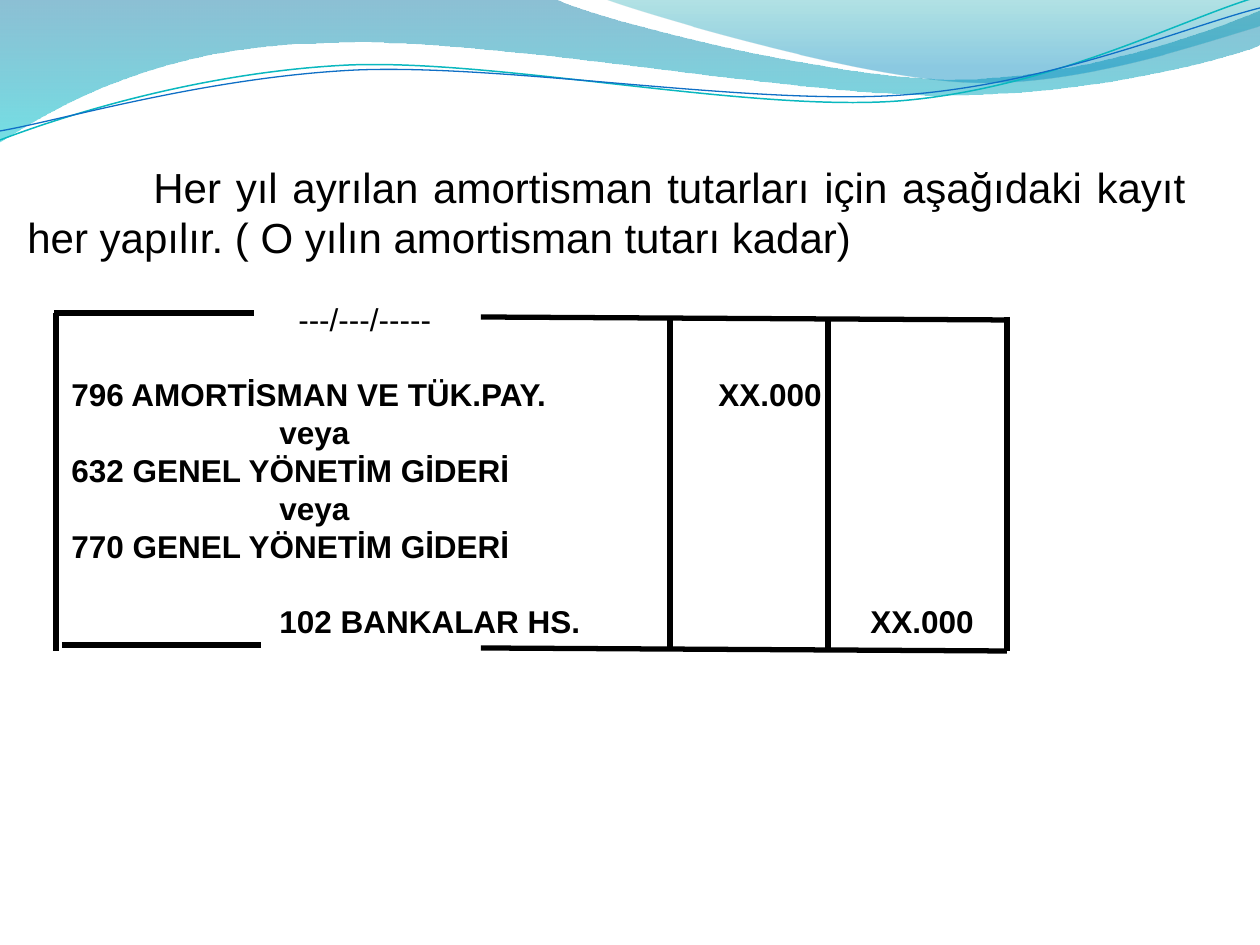
from pptx import Presentation
from pptx.dml.color import RGBColor
from pptx.enum.shapes import MSO_CONNECTOR
from pptx.enum.text import PP_ALIGN
from pptx.oxml.ns import qn
from pptx.util import Emu, Pt
from lxml import etree

LINE = MSO_CONNECTOR.STRAIGHT
JUST = PP_ALIGN.JUSTIFY
PITCH = 21.6

# Outlines in px: a start point, then lines (x, y) or cubic curves (6 numbers)
BANDS = [
    ([(0, 0), (555, -1), (600, 21, 837, 79, 955, 79),
      (1075, 79, 1207, 33, 1260, 11), (1261, 45),
      (1239, 55, 1096, 96, 940, 95), (784, 95, 481, 35, 324, 43),
      (163, 45, 58, 105, -1, 142)],
     [(0, "0074A1", 45), (1, "00C6CF", 55)]),
    ([(604, -1), (643, 14, 859, 78, 969, 82),
      (1079, 87, 1211, 40, 1260, 26), (1260, 0)],
     [(0, "00A1A9", 30), (0.8, "008BBF", 45)]),
]
WAVES = [
    ([(0, 140), (60, 117, 199, 72, 349, 65), (498, 59, 747, 112, 898, 101),
      (1050, 89, 1182, 19, 1257, -3)], "0AB8BF", 0.85),
    ([(0, 131), (59, 121, 207, 77, 357, 70), (508, 64, 752, 106, 903, 95),
      (1053, 84, 1188, 26, 1260, 8)], "0F6FC6", 0.75),
]
INTRO = ("Her yıl ayrılan amortisman tutarları için aşağıdaki kayıt "
         "her yapılır. ( O yılın amortisman tutarı kadar)")
# Text, tab stops in px, bold, free lines above
ROWS = [
    ("\t---/---/-----", [271], False, 1),
    ("\t796 AMORTİSMAN VE TÜK.PAY.\tXX.000", [44, 691], True, 1),
    ("\tveya", [252], True, 0),
    ("\t632 GENEL YÖNETİM GİDERİ", [44], True, 0),
    ("\tveya", [252], True, 0),
    ("\t770 GENEL YÖNETİM GİDERİ", [44], True, 0),
    ("\t102 BANKALAR HS.\tXX.000", [252, 843], True, 1),
]
RULES = [
    (54, 313, 254, 313, 3), (481, 317, 1007, 320, 3),
    (670, 318, 670, 651, 3.5), (828, 320, 828, 649, 3.5),
    (1007, 317, 1007, 651, 3.5), (56, 313, 56, 651, 3.5),
    (62, 645, 261, 645, 3), (481, 648, 1007, 651, 3),
]


def px(n):
    return Emu(round(n * 914400 / 126))


def rgb(code):
    return RGBColor.from_string(code)


def add_free(slide, path, close):
    """Join the segment ends by lines, then bend the curved ones."""
    ends = [(px(seg[-2]), px(seg[-1])) for seg in path]
    pen = slide.shapes.build_freeform(*ends[0], scale=1.0)
    pen.add_line_segments(ends[1:], close=close)
    shape = pen.convert_to_shape()
    shape.shadow.inherit = False
    left, top = shape.left, shape.top
    lines = list(shape.element.iter(qn("a:lnTo")))
    for line, seg in zip(lines, path[1:]):
        if len(seg) == 6:
            line.tag = qn("a:cubicBezTo")
            for i in (0, 2):
                pt = etree.Element(qn("a:pt"), x=str(px(seg[i]) - left),
                                   y=str(px(seg[i + 1]) - top))
                line.insert(i // 2, pt)
    return shape


def add_band(slide, path, stops):
    shape = add_free(slide, path, True)
    shape.line.fill.background()
    fill = shape.fill
    fill.gradient()
    fill.gradient_angle = 270
    nodes = shape.element.spPr.find(qn("a:gradFill")).iter(qn("a:gs"))
    for stop, node, (pos, code, alpha) in zip(fill.gradient_stops,
                                              nodes, stops):
        stop.position = pos
        stop.color.rgb = rgb(code)
        etree.SubElement(node[0], qn("a:alpha"), val=str(alpha * 1000))


def add_wave(slide, path, code, width):
    shape = add_free(slide, path, False)
    shape.fill.background()
    shape.line.color.rgb = rgb(code)
    shape.line.width = Pt(width)


def add_rule(slide, x1, y1, x2, y2, width):
    rule = slide.shapes.add_connector(LINE, px(x1), px(y1), px(x2), px(y2))
    rule.line.color.rgb = rgb("000000")
    rule.line.width = Pt(width)
    etree.SubElement(rule.element.spPr, qn("a:effectLst"))


def set_para(para, text, tabs, size, bold, pitch, above):
    form = {"alignment": JUST, "line_spacing": Pt(pitch),
            "space_before": Pt(above), "space_after": Pt(0)}
    for key, val in form.items():
        setattr(para, key, val)
    stops = etree.SubElement(para._p.get_or_add_pPr(), qn("a:tabLst"))
    for tab in tabs:
        etree.SubElement(stops, qn("a:tab"), pos=str(px(tab)), algn="l")
    run = para.add_run()
    run.text = text
    for key, val in {"name": "Arial", "size": Pt(size), "bold": bold}.items():
        setattr(run.font, key, val)
    run.font.color.rgb = rgb("000000")


def add_entry(slide):
    """Place the opening sentence and the journal rows in one text box."""
    box = slide.shapes.add_textbox(px(15), px(155), px(1183), px(866))
    frame = box.text_frame
    frame.word_wrap = True
    set_para(frame.paragraphs[0], "\t" + INTRO, [126], 24, False, 28.8, 0)
    for text, tabs, bold, gap in ROWS:
        set_para(frame.add_paragraph(), text, tabs, 18, bold,
                 PITCH, gap * PITCH)


def main():
    prs = Presentation()
    prs.slide_width, prs.slide_height = px(1260), px(945)
    slide = prs.slides.add_slide(prs.slide_layouts[6])
    for band in BANDS:
        add_band(slide, *band)
    for wave in WAVES:
        add_wave(slide, *wave)
    add_entry(slide)
    for rule in RULES:
        add_rule(slide, *rule)
    prs.save("out.pptx")


if __name__ == "__main__":
    main()
